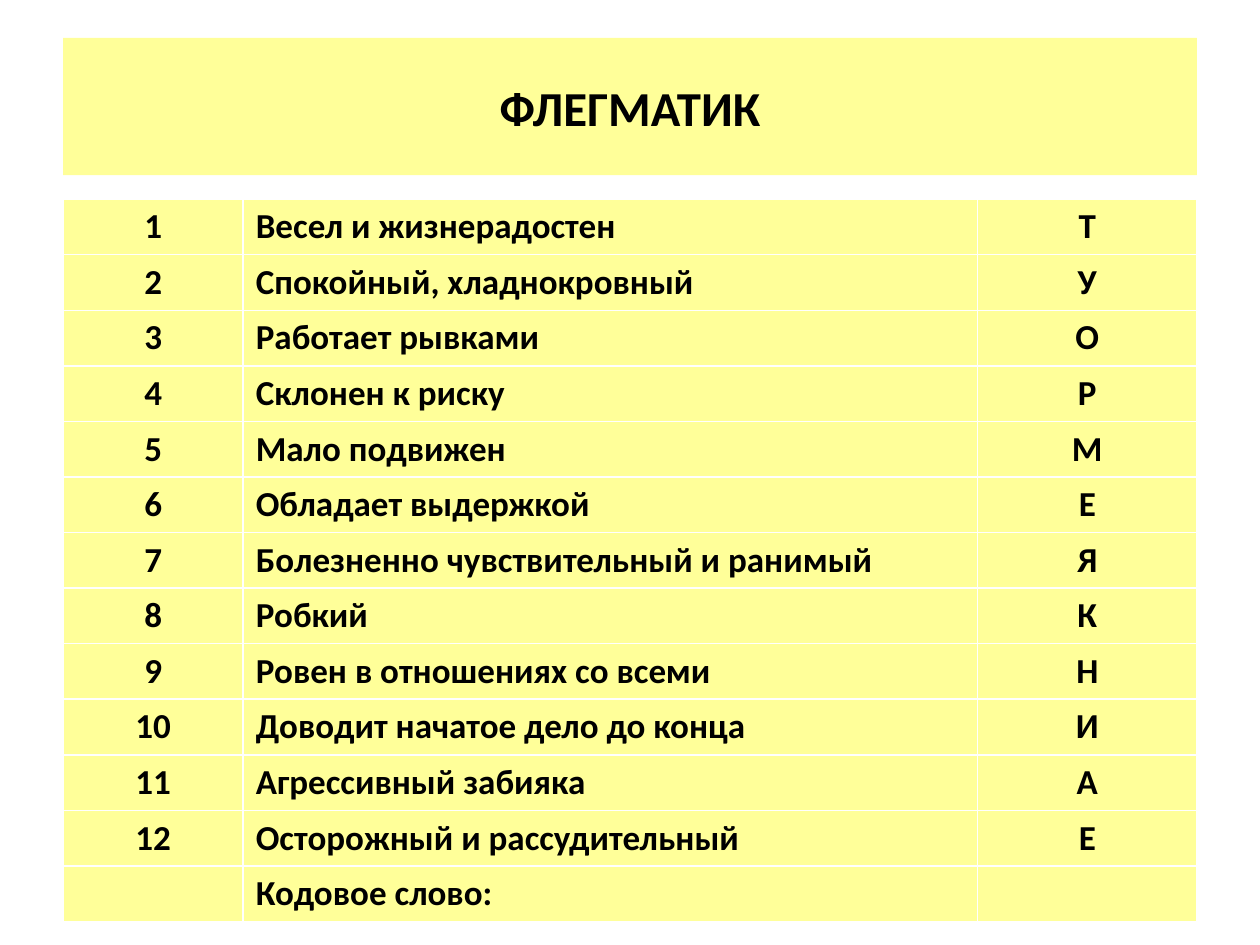
from pptx import Presentation
from pptx.dml.color import RGBColor
from pptx.enum.text import MSO_ANCHOR, MSO_AUTO_SIZE, PP_ALIGN
from pptx.util import Pt

MID = MSO_ANCHOR.MIDDLE
FIXED = MSO_AUTO_SIZE.NONE
CENTER, JUST = PP_ALIGN.CENTER, PP_ALIGN.JUSTIFY
FONT = "Calibri"
COLORS = {"fill": "FFFF99", "text": "000000"}
TRAITS = [
    ("Весел и жизнерадостен", "Т"),
    ("Спокойный, хладнокровный", "У"),
    ("Работает рывками", "О"),
    ("Склонен к риску", "Р"),
    ("Мало подвижен", "М"),
    ("Обладает выдержкой", "Е"),
    ("Болезненно чувствительный и ранимый", "Я"),
    ("Робкий", "К"),
    ("Ровен в отношениях со всеми", "Н"),
    ("Доводит начатое дело до конца", "И"),
    ("Агрессивный забияка", "А"),
    ("Осторожный и рассудительный", "Е"),
]


def paint(item):
    item.fill.solid()
    item.fill.fore_color.rgb = RGBColor.from_string(COLORS["fill"])


def write(frame, text, size, align):
    para = frame.paragraphs[0]
    para.alignment = align
    run = para.add_run()
    run.text = text
    font = run.font
    font.name, font.size, font.bold = FONT, Pt(size), True
    font.color.rgb = RGBColor.from_string(COLORS["text"])


def add_title(slide, box, text):
    title = slide.shapes.title
    title.left, title.top, title.width, title.height = map(Pt, box)
    paint(title)
    frame = title.text_frame
    frame.word_wrap = True
    frame.auto_size = FIXED
    frame.vertical_anchor = MID
    write(frame, text, 27.9, CENTER)


def add_traits(slide, box, widths):
    rows = [(str(num), *trait) for num, trait in enumerate(TRAITS, 1)]
    rows.append(("", "Кодовое слово:", ""))
    shape = slide.shapes.add_table(len(rows), len(widths), *map(Pt, box))
    table = shape.table
    table.horz_banding = False
    for col, width in zip(table.columns, widths):
        col.width = Pt(width)
    for row, texts in zip(table.rows, rows):
        row.height = Pt(box[3] / len(rows))
        for cell, text, align in zip(row.cells, texts, (CENTER, JUST, CENTER)):
            paint(cell)
            if text:
                write(cell.text_frame, text, 20, align)


def main():
    deck = Presentation()
    deck.slide_width, deck.slide_height = Pt(720), Pt(540)
    slide = deck.slides.add_slide(deck.slide_layouts[5])
    add_title(slide, (36, 21.6, 648, 78.5), "ФЛЕГМАТИК")
    add_traits(slide, (36, 113.8, 648, 412.75), (103, 419.7, 125.3))
    deck.save("out.pptx")


if __name__ == "__main__":
    main()
